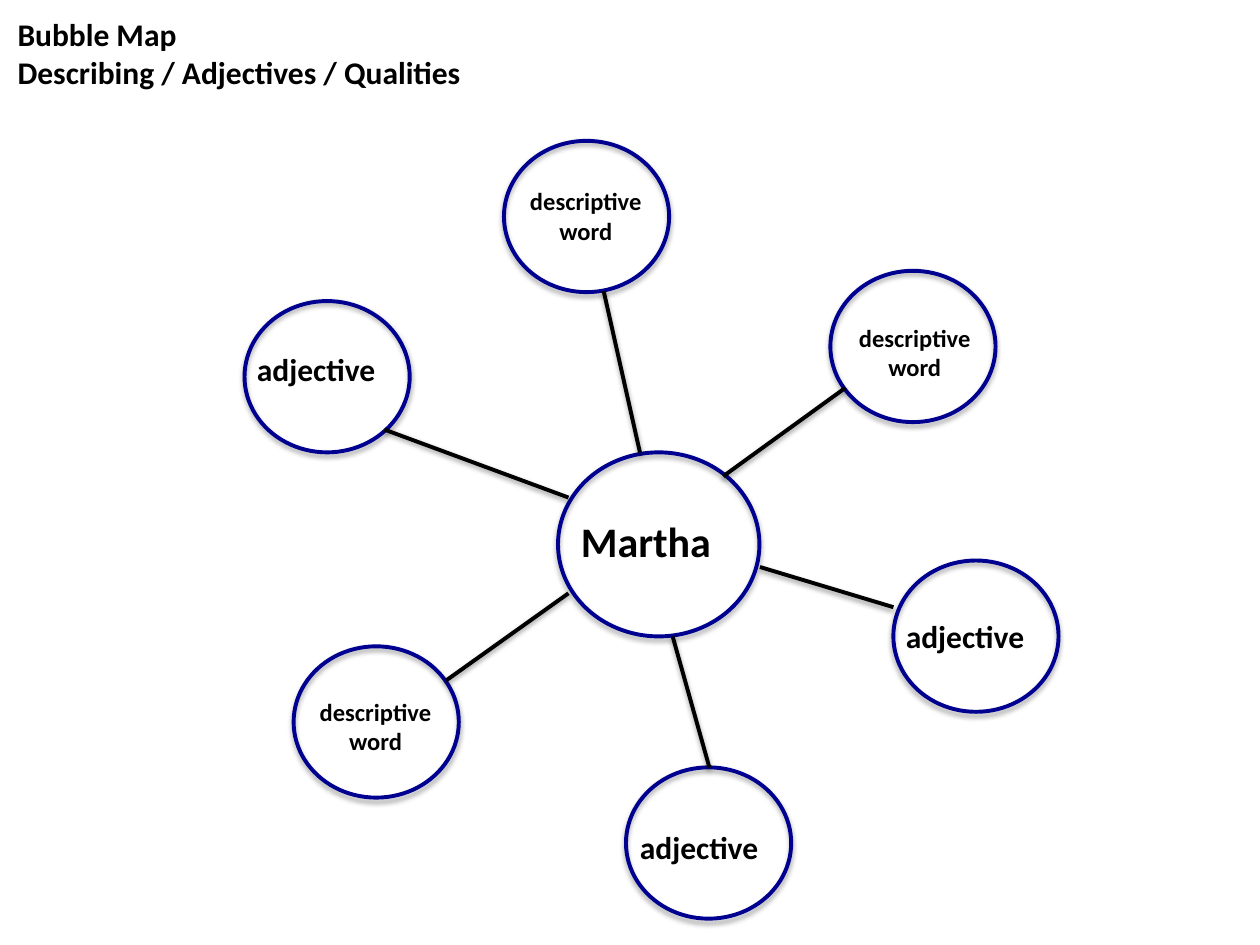
"""Build a bubble map slide: one subject ringed by six describing words."""
import pptx
import pptx.dml.color
import pptx.enum.shapes
import pptx.enum.text
import pptx.oxml
import pptx.oxml.ns
import pptx.util
from pptx.util import Cm


class Theme:
    font = "Calibri"
    ink = pptx.dml.color.RGBColor(0, 0, 0)
    ring = pptx.dml.color.RGBColor(0, 0, 0x90)
    line = pptx.util.Pt(2.25)
    large = pptx.util.Pt(24)
    mid = pptx.util.Pt(18)
    small = pptx.util.Pt(14)


def draw(shape, color, dist, alpha):
    shape.line.color.rgb = color
    shape.line.width = Theme.line
    shape._element.spPr.append(pptx.oxml.parse_xml(
        f'<a:effectLst {pptx.oxml.ns.nsdecls("a")}>'
        f'<a:outerShdw blurRad="{pptx.util.Pt(3.1)}" dist="{pptx.util.Pt(dist)}" '
        'dir="5400000" rotWithShape="0"><a:srgbClr val="000000">'
        f'<a:alpha val="{alpha}000"/></a:srgbClr></a:outerShdw></a:effectLst>'))


def write(shape, text, size, align):
    frame = shape.text_frame
    frame.text = text
    frame.word_wrap = True
    frame.auto_size = pptx.enum.text.MSO_AUTO_SIZE.NONE
    frame.vertical_anchor = pptx.enum.text.MSO_ANCHOR.TOP
    for par in frame.paragraphs:
        par.alignment = align
        for run in par.runs:
            run.font.name = Theme.font
            run.font.size = size
            run.font.bold = True
            run.font.color.rgb = Theme.ink


left = pptx.enum.text.PP_ALIGN.LEFT
center = pptx.enum.text.PP_ALIGN.CENTER

deck = pptx.Presentation()
deck.slide_width, deck.slide_height = Cm(25.4), Cm(19.05)
slide = deck.slides.add_slide(deck.slide_layouts[5])
shapes = slide.shapes

title = shapes.title
title.left, title.top, title.width, title.height = Cm(0.1), Cm(0.18), Cm(11.66), Cm(1.8)
write(title, "Bubble Map\nDescribing / Adjectives / Qualities", Theme.mid, left)

hub = (11.25, 9.12, 4.06, 3.71)
spots = [(16.74, 5.46), (18.01, 11.3), (12.62, 15.47),
         (5.92, 13.03), (4.93, 6.07), (10.16, 2.84)]
for box in [hub] + [(x, y, 3.33, 3.05) for x, y in spots]:
    bubble = shapes.add_shape(pptx.enum.shapes.MSO_SHAPE.OVAL, *map(Cm, box))
    bubble.fill.background()
    draw(bubble, Theme.ring, 1.8, 35)

spokes = [(17.04, 7.82, 14.58, 9.6), (18.01, 12.24, 15.32, 11.43),
          (11.46, 11.96, 8.99, 13.72), (14.3, 15.47, 13.56, 12.83),
          (11.46, 10.03, 7.75, 8.66), (12.17, 5.87, 12.9, 9.12)]
for ends in spokes:
    spoke = shapes.add_connector(pptx.enum.shapes.MSO_CONNECTOR.STRAIGHT, *map(Cm, ends))
    draw(spoke, Theme.ink, 1.6, 38)

groups = [
    ("adjective", Theme.mid, left, (3.43, 1.02),
     [(4.93, 6.93), (18.01, 12.32), (12.65, 16.56)]),
    ("descriptive\nword", Theme.small, center, (3.3, 1.45),
     [(5.92, 13.92), (16.79, 6.38), (10.16, 3.63)]),
    ("Martha", Theme.large, left, (3.68, 1.27), [(11.46, 10.26)]),
]
for text, size, align, area, places in groups:
    for place in places:
        label = shapes.add_textbox(*map(Cm, place + area))
        write(label, text, size, align)

deck.save("out.pptx")
